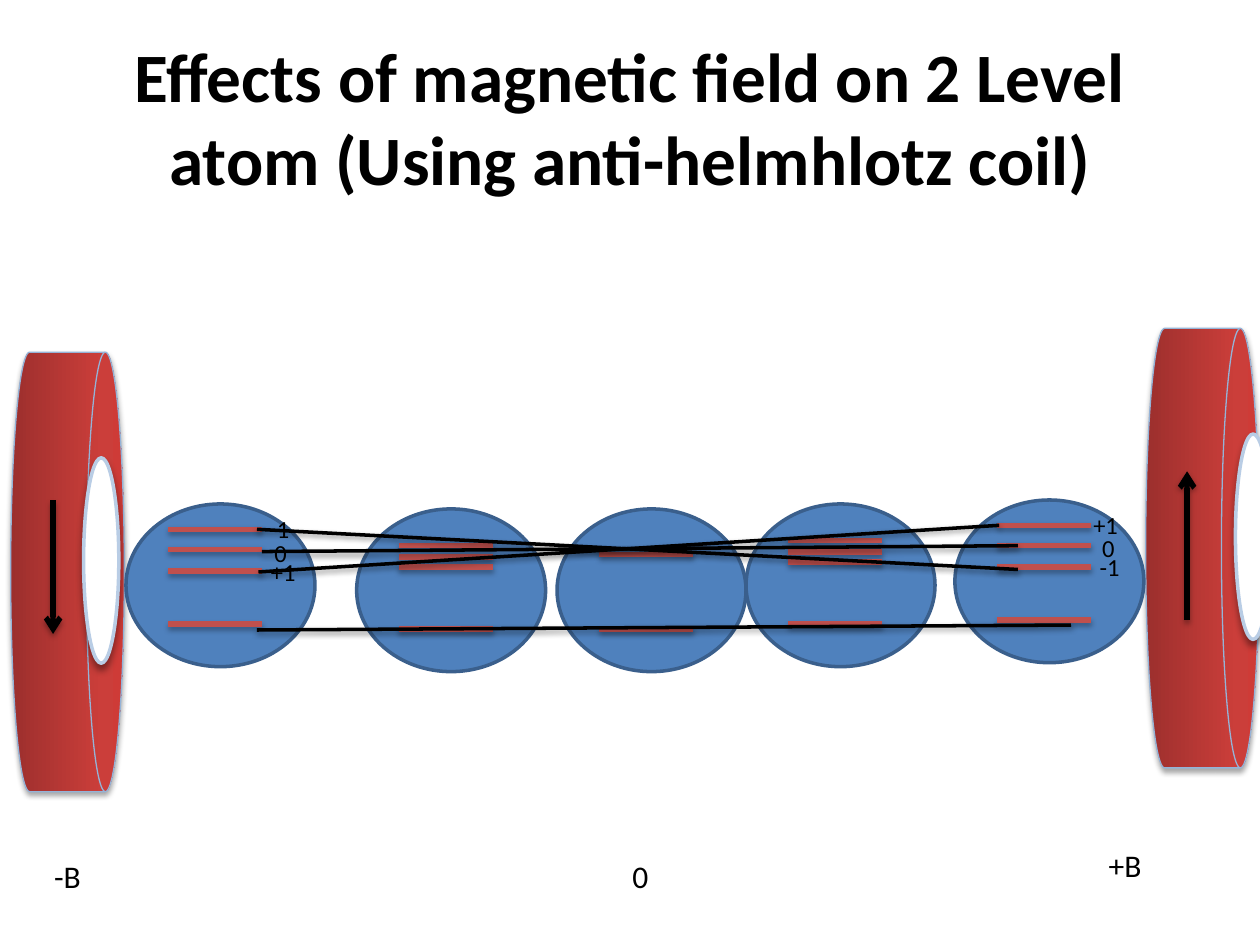
from lxml.etree import SubElement
from pptx import Presentation
from pptx.dml.color import RGBColor
from pptx.enum.shapes import MSO_CONNECTOR, MSO_SHAPE
from pptx.enum.text import MSO_ANCHOR, MSO_AUTO_SIZE, PP_ALIGN
from pptx.oxml import parse_xml
from pptx.oxml.ns import nsdecls, qn
from pptx.util import Cm, Pt

# Shadows: opacity in percent, blur and distance in points
SOFT_SHADOW = (35, 3.1, 1.8)
HOLE_SHADOW = (40, 4, 3)
TREND_SHADOW = (38, 3.1, 1.6)

COIL_STOPS = [(0, "9C2F2D"), (80, "CB3E3A"), (100, "CE3B37")]
ATOM_WIDTH, ATOM_HEIGHT = 3.81, 3.28
LEVEL_WIDTH, LEVEL_INSET = 1.9, 0.85
GROUND_LEVEL = 2.42
WIDE_SPLIT = (0.51, 0.92, 1.35)
NARROW_SPLIT = (0.74, 0.97, 1.17)
NO_SPLIT = (0.92,)


def rgb(code):
    return RGBColor.from_string(code)


class Painter:
    font = "Calibri"
    ink = "000000"
    level_color = "C0504D"

    def __init__(self, slide):
        self.slide = slide

    def title(self, text, left, top, width, height):
        title = self.slide.shapes.title
        title.left, title.top = Cm(left), Cm(top)
        title.width, title.height = Cm(width), Cm(height)
        frame = title.text_frame
        frame.text = text
        frame.vertical_anchor = MSO_ANCHOR.MIDDLE
        self.style_paragraph(frame.paragraphs[0], 39.6, True)
        frame.paragraphs[0].alignment = PP_ALIGN.CENTER

    def style_paragraph(self, paragraph, size, bold=False):
        font = paragraph.font
        font.name, font.size, font.bold = self.font, Pt(size), bold
        font.color.rgb = rgb(self.ink)

    def shadow(self, shape, opacity, blur, distance):
        """Add a shadow that falls straight down."""
        effects = SubElement(shape._element.spPr, qn("a:effectLst"))
        outer = SubElement(
            effects, qn("a:outerShdw"), blurRad=str(Pt(blur)),
            dist=str(Pt(distance)), dir="5400000", rotWithShape="0")
        color = SubElement(outer, qn("a:srgbClr"), val="000000")
        SubElement(color, qn("a:alpha"), val=str(opacity * 1000))

    def shape(self, kind, center, size, line_color, line_width, fill=None):
        (x, y), (width, height) = center, size
        shape = self.slide.shapes.add_shape(
            kind, Cm(x - width / 2), Cm(y - height / 2), Cm(width), Cm(height))
        if fill:
            shape.fill.solid()
            shape.fill.fore_color.rgb = rgb(fill)
        shape.line.color.rgb = rgb(line_color)
        shape.line.width = Pt(line_width)
        return shape

    def line(self, start, end, color, width, shadow=SOFT_SHADOW, arrow=False):
        line = self.slide.shapes.add_connector(
            MSO_CONNECTOR.STRAIGHT, *(Cm(value) for value in (*start, *end)))
        line.line.color.rgb = rgb(color)
        line.line.width = Pt(width)
        if arrow:
            SubElement(line.line._get_or_add_ln(), qn("a:tailEnd"), type="arrow")
        self.shadow(line, *shadow)

    def label(self, text, left, top, width, height, size):
        box = self.slide.shapes.add_textbox(
            Cm(left), Cm(top), Cm(width), Cm(height))
        frame = box.text_frame
        frame.word_wrap = False
        frame.auto_size = MSO_AUTO_SIZE.SHAPE_TO_FIT_TEXT
        frame.text = text
        self.style_paragraph(frame.paragraphs[0], size)

    def coil(self, center, hole_x, current_x, current_from, current_to):
        """Draw a coil seen from the side, with its hole and current arrow."""
        disk = self.shape(MSO_SHAPE.FLOWCHART_MAGNETIC_DISK, center,
                          (8.86, 2.29), "95B3D7", 0.75)
        stops = "".join(
            f'<a:gs pos="{position * 1000}"><a:srgbClr val="{color}"/></a:gs>'
            for position, color in COIL_STOPS)
        gradient = parse_xml(
            f'<a:gradFill {nsdecls("a")} rotWithShape="1"><a:gsLst>{stops}'
            '</a:gsLst><a:lin ang="16200000" scaled="0"/></a:gradFill>')
        disk._element.spPr.find(qn("a:prstGeom")).addnext(gradient)
        self.shadow(disk, *SOFT_SHADOW)
        hole = self.shape(MSO_SHAPE.OVAL, (hole_x, center[1] - 0.23),
                          (4.14, 0.71), "B9CDE5", 2, "FFFFFF")
        self.shadow(hole, *HOLE_SHADOW)
        disk.rotation = hole.rotation = 90
        self.line((current_x, current_from), (current_x, current_to),
                  self.ink, 3, arrow=True)

    def atom(self, left, top, excited_levels):
        center = (left + ATOM_WIDTH / 2, top + ATOM_HEIGHT / 2)
        circle = self.shape(MSO_SHAPE.OVAL, center, (ATOM_WIDTH, ATOM_HEIGHT),
                            "3A5F8C", 2, "4F81BD")
        circle.shadow.inherit = False
        x = left + LEVEL_INSET
        for level in (*excited_levels, GROUND_LEVEL):
            self.line((x, top + level), (x + LEVEL_WIDTH, top + level),
                      self.level_color, 3)


def main():
    deck = Presentation()
    deck.slide_width, deck.slide_height = Cm(25.4), Cm(19.05)
    painter = Painter(deck.slides.add_slide(deck.slide_layouts[5]))
    painter.title("Effects of magnetic field on 2 Level atom "
                  "(Using anti-helmhlotz coil)", 1.27, 0.76, 22.86, 3.18)

    painter.coil((24.24, 11.05), 25.26, 23.93, 12.5, 9.5)
    painter.coil((1.36, 11.53), 2.04, 1.07, 10.08, 12.78)

    for field, left, top, width in [("-B", 0.84, 17.15, 1.07),
                                    ("0", 12.5, 17.15, 0.84),
                                    ("+B", 22.1, 16.94, 1.17)]:
        painter.label(field, left, top, width, 1.02, 18)

    for left, top, excited_levels in [(19.25, 10.08, WIDE_SPLIT),
                                      (2.54, 10.16, WIDE_SPLIT),
                                      (11.23, 10.26, NO_SPLIT),
                                      (7.19, 10.26, NARROW_SPLIT),
                                      (15.04, 10.16, NARROW_SPLIT)]:
        painter.atom(left, top, excited_levels)

    for state, left, top, width in [("+1", 21.79, 10.16, 1.02),
                                    ("-1", 21.92, 11, 0.91),
                                    ("0", 21.97, 10.62, 0.76),
                                    ("-1", 5.18, 10.24, 0.91),
                                    ("0", 5.28, 10.72, 0.76),
                                    ("+1", 5.21, 11.1, 1.02)]:
        painter.label(state, left, top, width, 0.86, 14)

    for start, end in [((5.18, 10.67), (20.52, 11.48)),
                       ((5.21, 11.53), (20.14, 10.59)),
                       ((5.28, 11.12), (20.52, 11)),
                       ((5.18, 12.7), (21.59, 12.6))]:
        painter.line(start, end, painter.ink, 2, TREND_SHADOW)

    deck.save("out.pptx")


if __name__ == "__main__":
    main()
